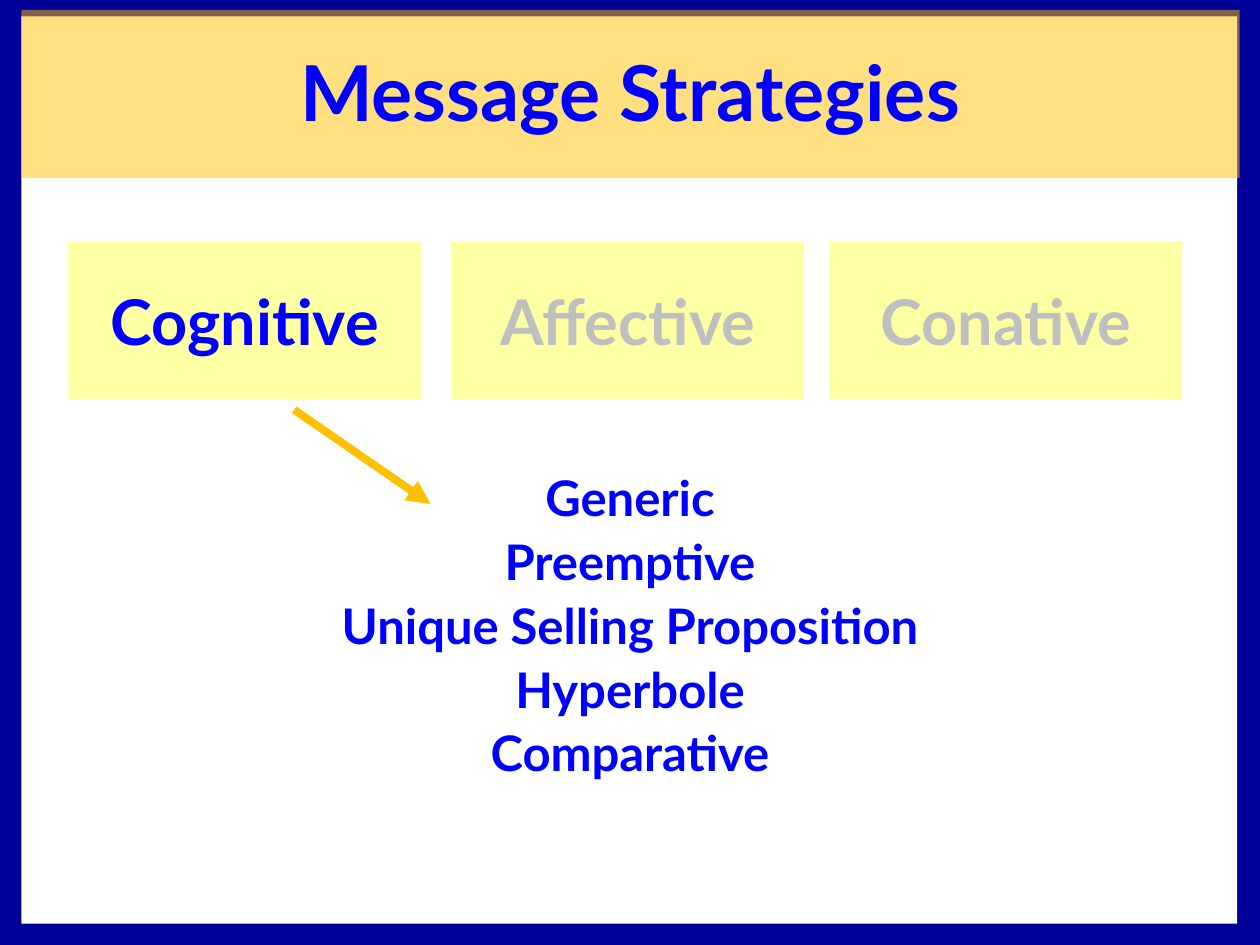
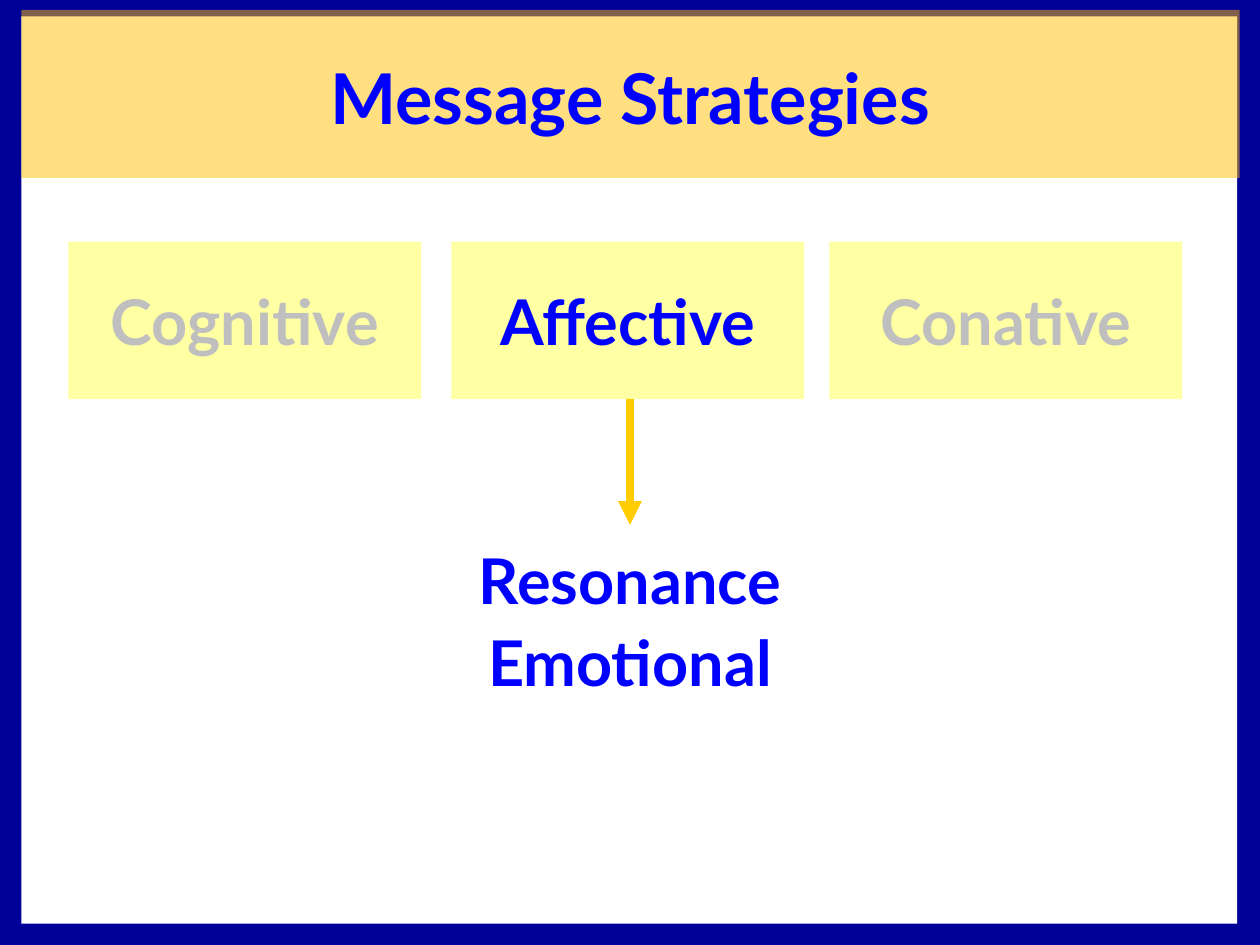
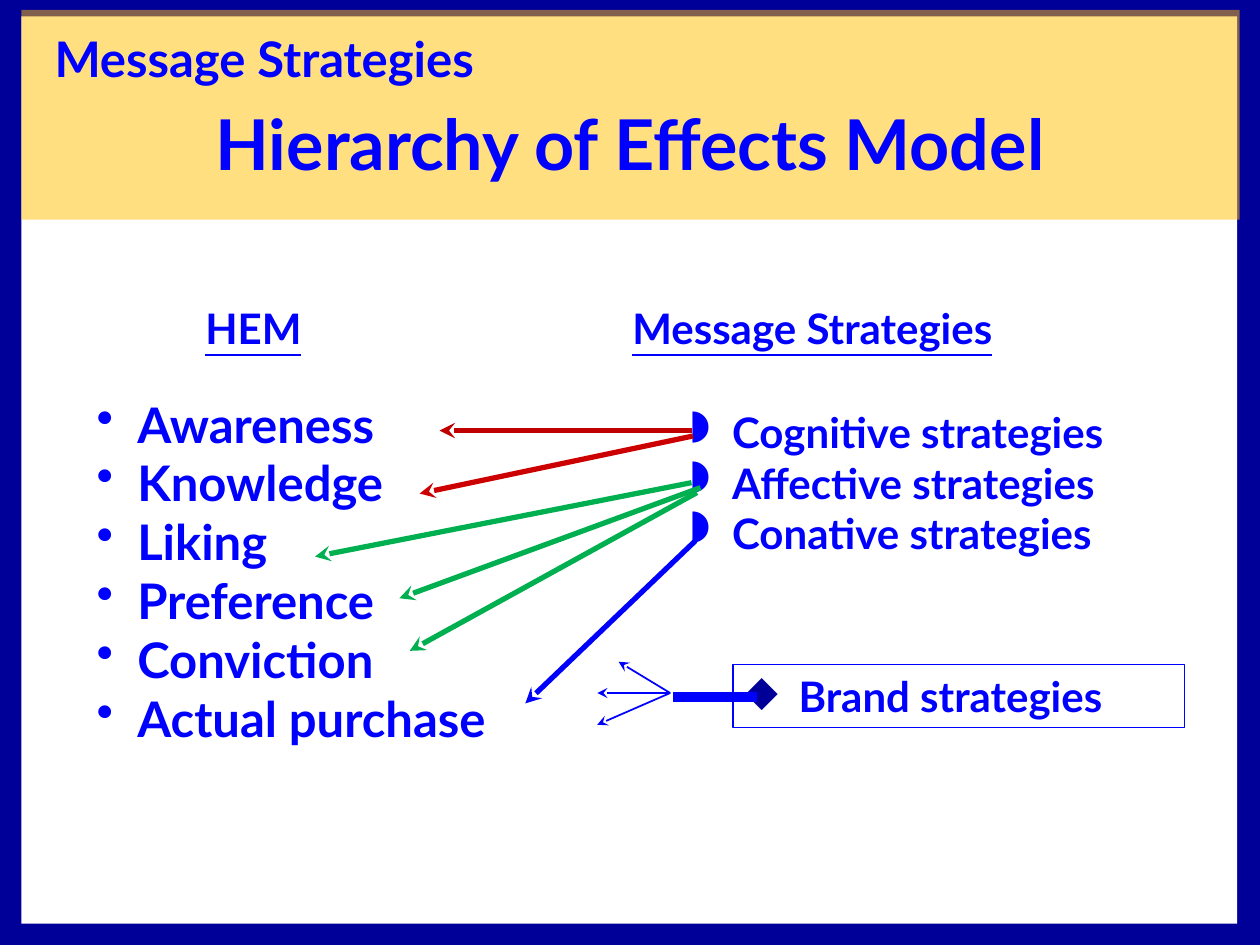
from pptx import Presentation
from pptx.dml.color import RGBColor
from pptx.enum.shapes import MSO_CONNECTOR, MSO_SHAPE
from pptx.enum.text import MSO_ANCHOR, PP_ALIGN
from pptx.oxml.ns import qn
from pptx.util import Cm, Pt
from lxml.etree import SubElement

FONT = "Lato"
NAVY, WHITE, BLUE, GREY = "000099", "FFFFFF", "0000FF", "BFBFBF"
GOLD, AMBER, LEMON = "FFC000", "FFCC00", "FFFF00"
RED, ROSE, GREEN = "C00000", "CC0000", "00B050"
TILES = ("Cognitive", "Affective", "Conative")
LEFTS = (1.38, 9.1, 16.72)


def rgb(code):
    return RGBColor.from_string(code)


class Deck:
    def __init__(self):
        self.show = Presentation()
        self.show.slide_width, self.show.slide_height = Cm(25.4), Cm(19.05)
        self.slide = None

    def page(self, band):
        self.slide = self.show.slides.add_slide(self.show.slide_layouts[6])
        self.rect(0, 0, 25.4, 19.05, NAVY)
        self.rect(0.43, 0.33, 24.51, 18.29, WHITE)
        self.rect(0.43, 0.2, 24.56, band, GOLD, 50)

    def rect(self, x, y, w, h, fill=None, alpha=100, line=None):
        shape = self.slide.shapes.add_shape(
            MSO_SHAPE.RECTANGLE, Cm(x), Cm(y), Cm(w), Cm(h))
        shape.shadow.inherit = False
        if fill:
            shape.fill.solid()
            shape.fill.fore_color.rgb = rgb(fill)
            if alpha < 100:
                tint = shape.fill._xPr.find(qn("a:solidFill"))[0]
                SubElement(tint, qn("a:alpha"), val=str(alpha * 1000))
        else:
            shape.fill.background()
        if line:
            shape.line.color.rgb = rgb(line)
            shape.line.width = Pt(0.75)
        else:
            shape.line.fill.background()
        return shape

    def text(self, x, y, w, h, lines, size, **style):
        box = self.slide.shapes.add_textbox(Cm(x), Cm(y), Cm(w), Cm(h))
        self.label(box, lines, size, **style)
        return box

    def label(self, shape, lines, size, color=BLUE, align=PP_ALIGN.LEFT,
              anchor=MSO_ANCHOR.TOP, gap=0, under=None):
        frame = shape.text_frame
        frame.word_wrap = True
        frame.vertical_anchor = anchor
        frame.text = "\n".join(lines)
        for para in frame.paragraphs:
            para.alignment = align
            para.space_before = Pt(gap)
            font = para.font
            font.name, font.size, font.bold = FONT, Pt(size), True
            font.color.rgb = rgb(color)
            font.underline = under

    def bullet(self, shape, sign, indent, color=BLUE):
        for para in shape.text_frame.paragraphs:
            props = para._p.get_or_add_pPr()
            props.set("marL", str(Cm(indent)))
            props.set("indent", str(-Cm(indent)))
            tint = SubElement(props, qn("a:buClr"))
            SubElement(tint, qn("a:srgbClr"), val=color)
            SubElement(props, qn("a:buChar"), char=sign)
            for rest in props.findall(qn("a:defRPr")):
                props.append(rest)

    def line(self, start, end, color, width, head=None):
        link = self.slide.shapes.add_connector(
            MSO_CONNECTOR.STRAIGHT, *map(Cm, (*start, *end)))
        link.line.color.rgb = rgb(color)
        link.line.width = Pt(width)
        if head:
            SubElement(link.line._get_or_add_ln(), qn("a:tailEnd"), type=head)
        SubElement(link._element.spPr, qn("a:effectLst"))

    def title(self, x, y, w, h, words, size, anchor=MSO_ANCHOR.MIDDLE):
        self.text(x, y, w, h, [words], size, align=PP_ALIGN.CENTER,
                  anchor=anchor)

    def tiles(self, live):
        for left, name in zip(LEFTS, TILES):
            tile = self.rect(left, 4.87, 7.11, 3.18, LEMON, 36)
            self.label(tile, [name], 36, BLUE if name == live else GREY,
                       PP_ALIGN.CENTER, MSO_ANCHOR.MIDDLE)

    def topics(self, y, h, lines, size):
        self.text(3.81, y, 17.78, h, lines, size, align=PP_ALIGN.CENTER,
                  gap=size / 10)


def main():
    deck = Deck()

    deck.page(3.39)
    deck.title(0.85, 0.45, 23.71, 2.75, "Message Strategies", 44)
    deck.topics(9.31, 7.2, ["Generic", "Preemptive",
                            "Unique Selling Proposition",
                            "Hyperbole", "Comparative"], 28)
    deck.line((5.93, 8.26), (8.68, 10.16), GOLD, 4.5, "triangle")
    deck.tiles("Cognitive")

    deck.page(3.39)
    deck.topics(10.8, 4.87, ["Resonance", "Emotional"], 36)
    deck.line((12.7, 8.04), (12.7, 10.58), AMBER, 4.5, "triangle")
    deck.tiles("Affective")
    deck.title(0.85, 0.21, 23.71, 3.46, "Message Strategies", 40)

    deck.page(4.23)
    deck.text(0.85, 0.45, 23.71, 3.55, ["Message Strategies"], 28)
    deck.title(3.07, 1.91, 19.26, 1.96, "Hierarchy of Effects Model", 40,
               MSO_ANCHOR.TOP)
    for x, w, words in ((3.89, 2.6, "HEM"),
                        (12.5, 8.86, "Message Strategies")):
        deck.text(x, 5.97, w, 1.28, [words], 24, under=True)
    steps = deck.text(1.7, 7.82, 9.27, 7.45,
                      ["Awareness", "Knowledge", "Liking", "Preference",
                       "Conviction", "Actual purchase"], 28)
    deck.bullet(steps, "•", 0.82)
    plans = deck.text(13.69, 8.08, 9.86, 3.33,
                      [f"{name} strategies" for name in TILES], 24)
    deck.bullet(plans, "◗", 0.82)
    brand = deck.rect(14.78, 13.39, 9.1, 1.28, line=BLUE)
    deck.label(brand, ["Brand strategies"], 24, anchor=MSO_ANCHOR.MIDDLE)
    deck.bullet(brand, "◆", 1.07, NAVY)

    for start, end, color in (
            ((13.94, 8.68), (8.86, 8.68), RED),
            ((13.97, 8.79), (8.46, 9.95), ROSE),
            ((13.94, 9.73), (6.35, 11.22), GREEN),
            ((14.12, 9.83), (8.05, 12.06), GREEN),
            ((14.05, 9.93), (8.26, 13.12), GREEN),
            ((14.02, 10.9), (10.59, 14.18), BLUE)):
        deck.line(start, end, color, 3, "stealth")
    deck.line((13.56, 14.05), (15.27, 14.05), BLUE, 6)
    for end in ((12.04, 14.61), (12.04, 13.97), (12.47, 13.34)):
        deck.line((13.51, 13.97), end, BLUE, 1, "stealth")

    deck.show.save("out.pptx")


if __name__ == "__main__":
    main()
